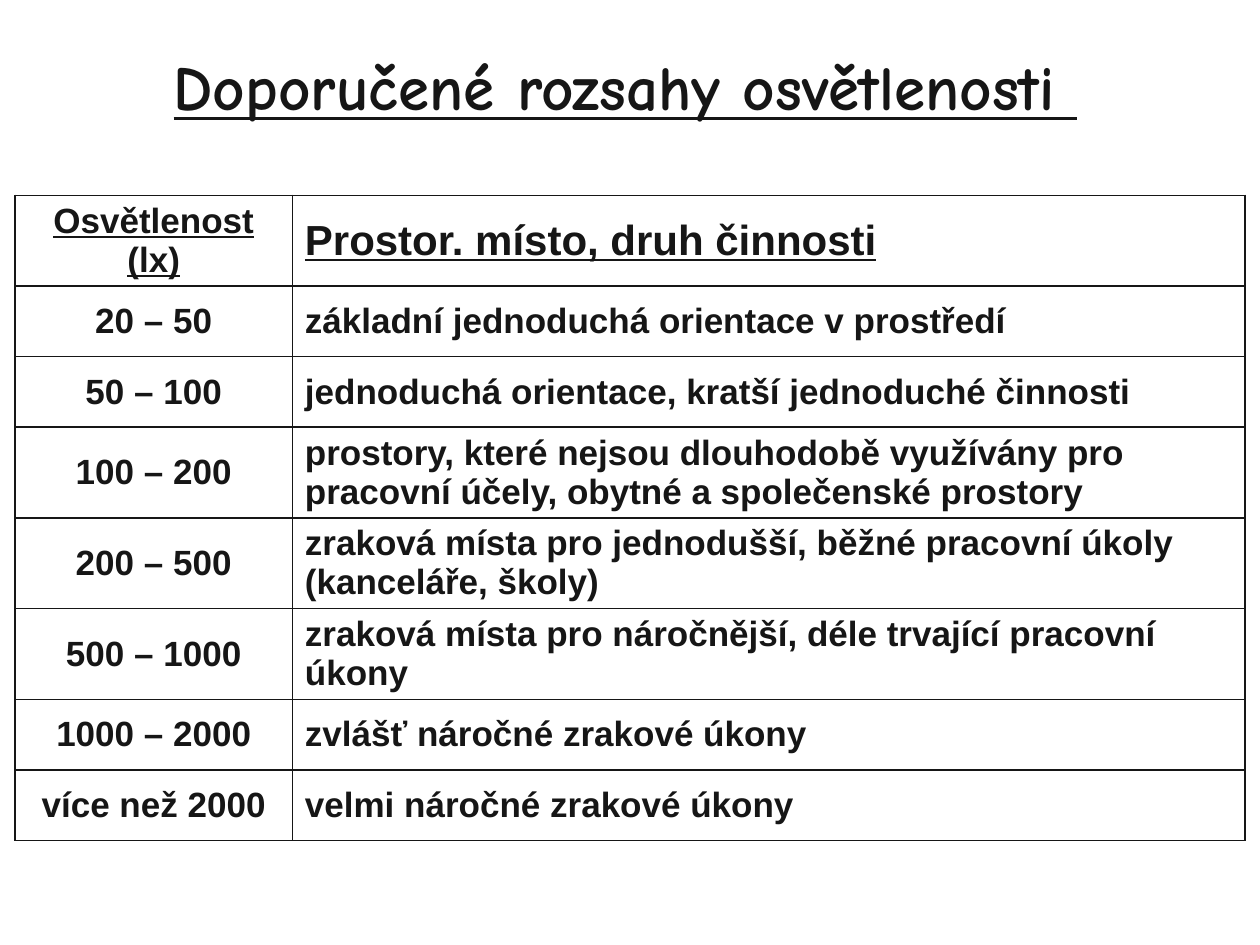
from lxml import etree
from pptx import Presentation
from pptx.dml.color import RGBColor
from pptx.enum.text import MSO_ANCHOR, PP_ALIGN
from pptx.oxml.ns import qn
from pptx.util import Inches, Pt

MIDDLE = MSO_ANCHOR.MIDDLE
LEFT, CENTER = PP_ALIGN.LEFT, PP_ALIGN.CENTER
COLORS = {"ink": "161616", "paper": "FFFFFF"}
TITLE = "Doporučené rozsahy osvětlenosti "
HEAD = ("Osvětlenost (lx)", "Prostor. místo, druh činnosti")
RANGES = [
    ("20 – 50", "základní jednoduchá orientace v prostředí"),
    ("50 – 100", "jednoduchá orientace, kratší jednoduché činnosti"),
    ("100 – 200", "prostory, které nejsou dlouhodobě využívány pro "
                  "pracovní účely, obytné a společenské prostory"),
    ("200 – 500", "zraková místa pro jednodušší, běžné pracovní úkoly "
                  "(kanceláře, školy)"),
    ("500 – 1000", "zraková místa pro náročnější, déle trvající pracovní úkony"),
    ("1000 – 2000", "zvlášť náročné zrakové úkony"),
    ("více než 2000", "velmi náročné zrakové úkony"),
]


class Deck:
    def __init__(self):
        self.prs = Presentation()
        self.prs.slide_width = Inches(10)
        self.prs.slide_height = Inches(7.5)
        self.slide = self.prs.slides.add_slide(self.prs.slide_layouts[5])

    def style(self, para, size, align, face="Arial", under=False):
        para.alignment = align
        font = para.font
        font.name, font.size = face, Pt(size)
        font.bold, font.underline = True, under
        font.color.rgb = RGBColor.from_string(COLORS["ink"])

    def title(self, text, left, top, width, height):
        shape = self.slide.shapes.title
        shape.left, shape.top = Inches(left), Inches(top)
        shape.width, shape.height = Inches(width), Inches(height)
        frame = shape.text_frame
        frame.text = text
        frame.vertical_anchor = MIDDLE
        self.style(frame.paragraphs[0], 36, CENTER, "Comic Neue", True)

    def border(self, cell):
        props = cell._tc.get_or_add_tcPr()
        for side in ("lnL", "lnR", "lnT", "lnB"):
            line = etree.SubElement(props, qn(f"a:{side}"), w=str(Pt(1)))
            fill = etree.SubElement(line, qn("a:solidFill"))
            etree.SubElement(fill, qn("a:srgbClr"), val=COLORS["ink"])

    def cell(self, cell, text, size, align, under):
        self.border(cell)
        cell.fill.solid()
        cell.fill.fore_color.rgb = RGBColor.from_string(COLORS["paper"])
        cell.vertical_anchor = MIDDLE
        cell.text = text
        self.style(cell.text_frame.paragraphs[0], size, align, under=under)

    def table(self, head, body, left, top, widths, heights):
        rows = [head, *body]
        table = self.slide.shapes.add_table(
            len(rows), len(widths), Inches(left), Inches(top),
            Inches(sum(widths)), Inches(sum(heights))).table
        table.first_row = table.horz_banding = False
        for col, width in zip(table.columns, widths):
            col.width = Inches(width)
        for row, height in zip(table.rows, heights):
            row.height = Inches(height)
        for r, row in enumerate(rows):
            for c, text in enumerate(row):
                size = 24 if r == 0 and c == 1 else 20
                align = LEFT if c else CENTER
                self.cell(table.cell(r, c), text, size, align, r == 0)


def main():
    deck = Deck()
    deck.title(TITLE, 0.12, 0.36, 9.69, 0.63)
    heights = [0.54] + [0.56] * len(RANGES)
    deck.table(HEAD, RANGES, 0.12, 1.55, [2.2, 7.56], heights)
    deck.prs.save("out.pptx")


if __name__ == "__main__":
    main()
